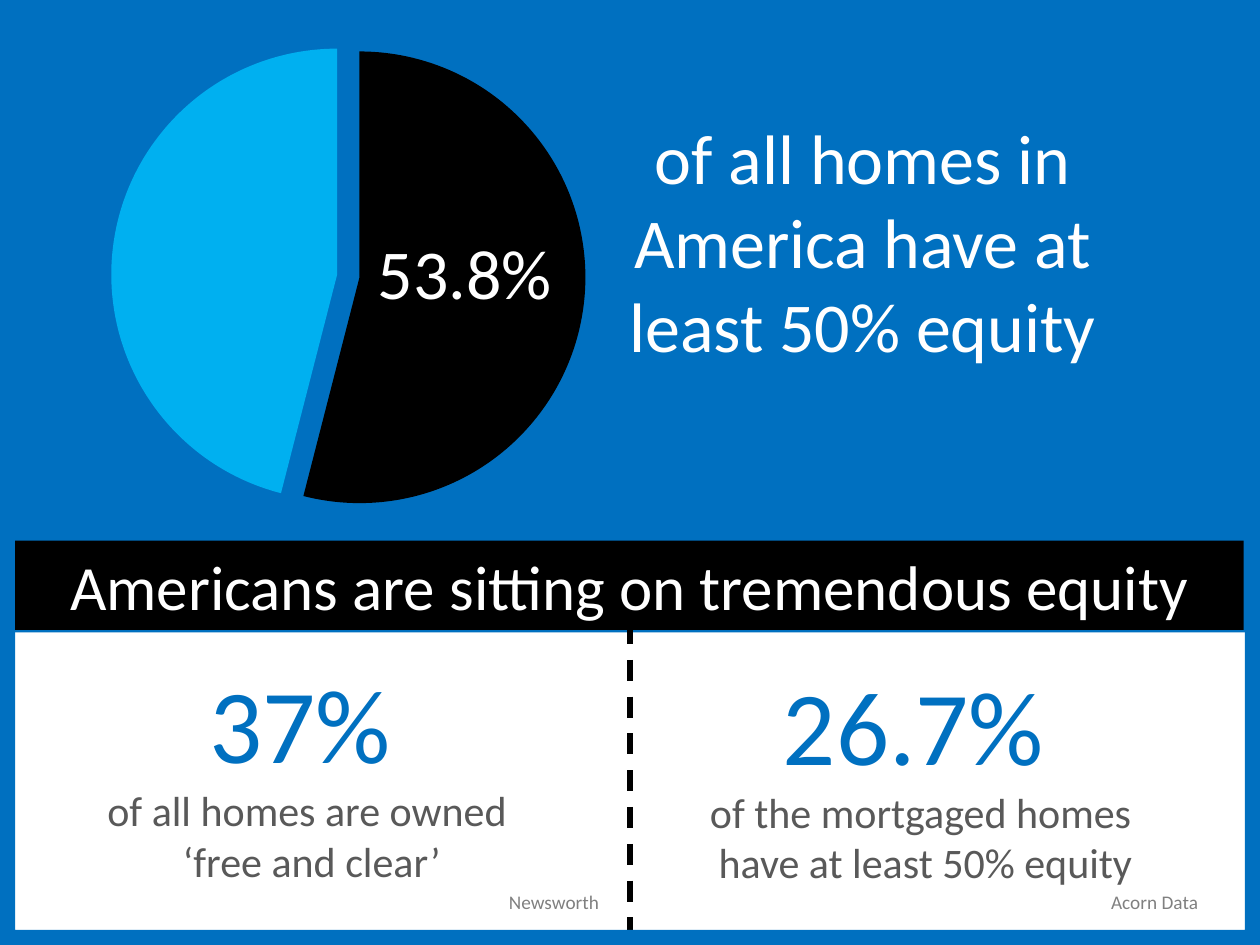
from dataclasses import dataclass

from lxml import etree
from pptx import Presentation
from pptx.chart.data import CategoryChartData
from pptx.dml.color import RGBColor
from pptx.enum.chart import XL_CHART_TYPE
from pptx.enum.dml import MSO_LINE
from pptx.enum.shapes import MSO_CONNECTOR, MSO_SHAPE
from pptx.enum.text import MSO_ANCHOR, MSO_AUTO_SIZE, PP_ALIGN
from pptx.oxml.ns import qn
from pptx.util import Inches, Pt

PIE = XL_CHART_TYPE.PIE
DASH = MSO_LINE.DASH
STRAIGHT = MSO_CONNECTOR.STRAIGHT
RECTANGLE, FRAME = MSO_SHAPE.RECTANGLE, MSO_SHAPE.FRAME
MIDDLE = MSO_ANCHOR.MIDDLE
NO_AUTOFIT, GROW = MSO_AUTO_SIZE.NONE, MSO_AUTO_SIZE.SHAPE_TO_FIT_TEXT
LEFT, CENTER = PP_ALIGN.LEFT, PP_ALIGN.CENTER
TITLE_ONLY_LAYOUT = 5


@dataclass(frozen=True)
class Theme:
    font: str = "Calibri"
    blue: RGBColor = RGBColor(0x00, 0x70, 0xC0)
    light_blue: RGBColor = RGBColor(0x00, 0xB0, 0xF0)
    black: RGBColor = RGBColor(0, 0, 0)
    white: RGBColor = RGBColor(0xFF, 0xFF, 0xFF)
    body_gray: RGBColor = RGBColor(0x59, 0x59, 0x59)
    source_gray: RGBColor = RGBColor(0x80, 0x80, 0x80)
    statistic_size: int = 60
    headline_size: int = 40
    title_size: int = 36
    body_size: int = 24
    source_size: int = 11


@dataclass(frozen=True)
class Box:
    left: float
    top: float
    width: float
    height: float

    def lengths(self) -> tuple:
        return tuple(Inches(value) for value in
                     (self.left, self.top, self.width, self.height))


@dataclass(frozen=True)
class Line:
    text: str
    size: int
    color: RGBColor


@dataclass(frozen=True)
class Statistic:
    box: Box
    figure: str
    description: tuple
    source: str
    source_box: Box


THEME = Theme()
STATISTICS = (
    Statistic(Box(0.39, 5.18, 4.17, 1.92), "37% ",
              ("of all homes are owned ", "‘free and clear’"),
              "Newsworth", Box(3.94, 7.02, 0.95, 0.29)),
    Statistic(Box(5.13, 5.19, 4.43, 1.92), "26.7% ",
              ("of the mortgaged homes ", "have at least 50% equity"),
              "Acorn Data", Box(8.72, 7.02, 1, 0.29)),
)


def write_lines(text_frame, lines: list, alignment) -> None:
    for index, line in enumerate(lines):
        paragraph = text_frame.paragraphs[0] if index == 0 else text_frame.add_paragraph()
        paragraph.text = line.text
        paragraph.alignment = alignment
        paragraph.font.name = THEME.font
        paragraph.font.size = Pt(line.size)
        paragraph.font.color.rgb = line.color


def add_text(slide, box: Box, lines: list, alignment=CENTER, wrap: bool = True) -> None:
    text_frame = slide.shapes.add_textbox(*box.lengths()).text_frame
    text_frame.auto_size = GROW
    text_frame.word_wrap = wrap
    write_lines(text_frame, lines, alignment)


def add_blue_shape(slide, kind, box: Box):
    shape = slide.shapes.add_shape(kind, *box.lengths())
    shape.shadow.inherit = False
    shape.fill.solid()
    shape.fill.fore_color.rgb = THEME.blue
    shape.line.fill.background()
    return shape


def add_statistic(slide, statistic: Statistic) -> None:
    lines = [Line(statistic.figure, THEME.statistic_size, THEME.blue)]
    lines += [Line(text, THEME.body_size, THEME.body_gray)
              for text in statistic.description]
    add_text(slide, statistic.box, lines)
    add_text(slide, statistic.source_box,
             [Line(statistic.source, THEME.source_size, THEME.source_gray)],
             LEFT, wrap=False)


def add_divider(slide) -> None:
    divider = slide.shapes.add_connector(
        STRAIGHT, Inches(5), Inches(4.36), Inches(5), Inches(7.46))
    divider.line.color.rgb = THEME.black
    divider.line.width = Pt(3)
    divider.line.dash_style = DASH
    etree.SubElement(divider._element.spPr, qn("a:effectLst"))


def add_equity_pie(slide, box: Box) -> None:
    data = CategoryChartData()
    data.categories = ["1", "2"]
    data.add_series("Series 1", (54, 46))
    chart = slide.shapes.add_chart(PIE, *box.lengths(), data).chart
    chart.has_title = False
    chart.has_legend = False
    chart.font.name = THEME.font
    chart.font.size = Pt(10)
    chart.font.color.rgb = THEME.black
    series = chart.plots[0].series[0]
    for index, color in enumerate((THEME.black, THEME.light_blue)):
        fill = series.points[index].format.fill
        fill.solid()
        fill.fore_color.rgb = color
    # Pull the slices apart
    explosion = etree.Element(qn("c:explosion"), val="5")
    series._element.find(qn("c:dPt")).addprevious(explosion)


def place_title(slide, box: Box) -> None:
    title = slide.shapes.title
    title.left, title.top, title.width, title.height = box.lengths()
    title.fill.solid()
    title.fill.fore_color.rgb = THEME.black
    text_frame = title.text_frame
    text_frame.auto_size = NO_AUTOFIT
    text_frame.word_wrap = True
    text_frame.vertical_anchor = MIDDLE
    write_lines(text_frame, [Line("Americans are sitting on tremendous equity",
                                  THEME.title_size, THEME.white)], CENTER)
    # The band lies in front of the frame and the divider
    slide.shapes._spTree.append(title._element)


def main() -> None:
    presentation = Presentation()
    presentation.slide_width, presentation.slide_height = Inches(10), Inches(7.5)
    slide = presentation.slides.add_slide(presentation.slide_layouts[TITLE_ONLY_LAYOUT])

    # Blue upper panel
    add_blue_shape(slide, RECTANGLE, Box(-0.01, 0, 10.01, 5.02))

    # Two statistics on white, parted by a dashed line
    for statistic in STATISTICS:
        add_statistic(slide, statistic)
    add_divider(slide)

    # Border around the slide
    frame = add_blue_shape(slide, FRAME, Box(0, 0, 10, 7.5))
    frame.adjustments[0] = 0.016

    # Pie with its figure and headline
    add_text(slide, Box(4.54, 0.86, 4.61, 2.12),
             [Line("of all homes in America have at least 50% equity",
                   THEME.headline_size, THEME.white)])
    add_equity_pie(slide, Box(0.37, 0.17, 4.79, 4.04))
    add_text(slide, Box(2.9, 1.77, 1.6, 0.77),
             [Line("53.8%", THEME.headline_size, THEME.white)], LEFT, wrap=False)

    # Title band
    place_title(slide, Box(0.12, 4.29, 9.75, 0.71))
    presentation.save("out.pptx")


if __name__ == "__main__":
    main()
